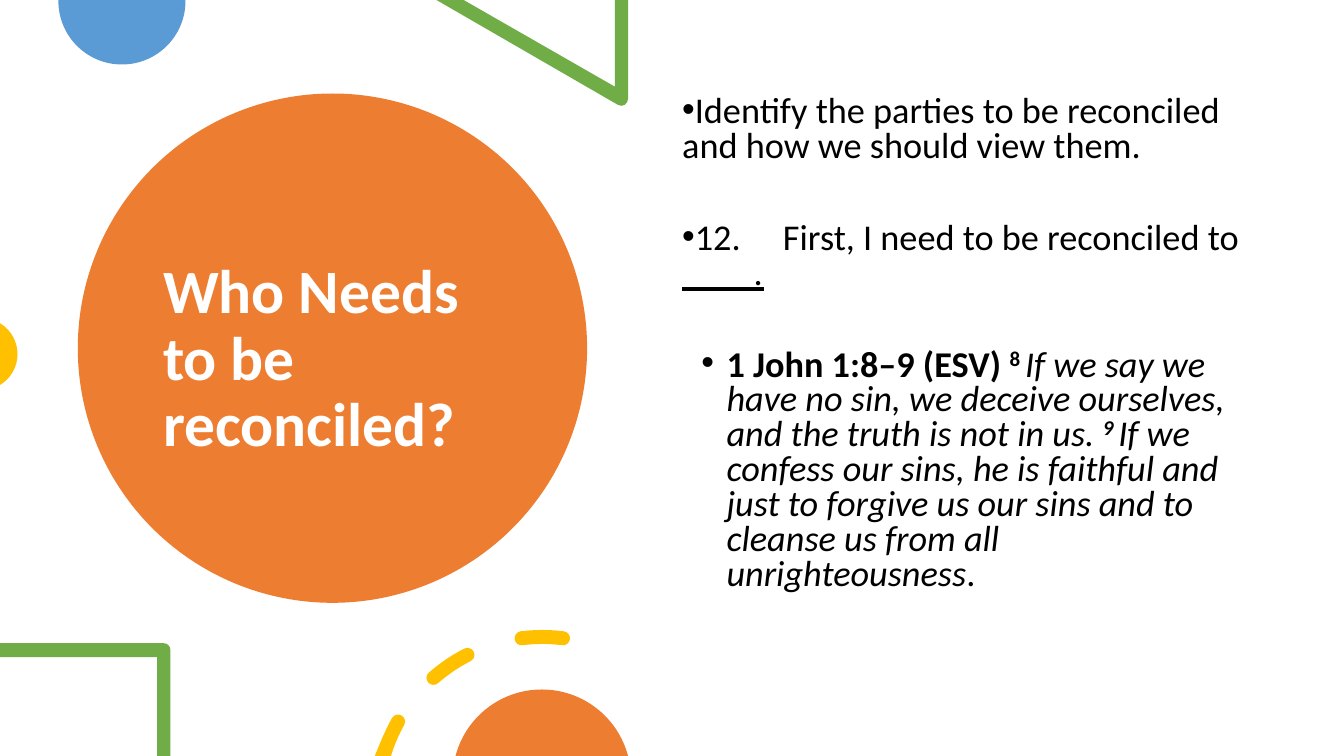
import math

import pptx
import pptx.dml.color
import pptx.enum.shapes
import pptx.enum.text
import pptx.oxml
import pptx.oxml.ns
import pptx.util

Pt = pptx.util.Pt
qn = pptx.oxml.ns.qn
ORANGE, BLUE, GREEN, YELLOW = "ED7D31", "5B9BD5", "70AD47", "FFC000"
BLACK, WHITE = "000000", "FFFFFF"
BODY_SIZE = 25.9
SLIDE_W, SLIDE_H = 960, 540
DRAWING_NS = "http://schemas.openxmlformats.org/drawingml/2006/main"


def rgb(color):
    return pptx.dml.color.RGBColor.from_string(color)


def paint(sp, color):
    sp.shadow.inherit = False
    sp.fill.solid()
    sp.fill.fore_color.rgb = rgb(color)
    sp.line.fill.background()


def add_circle(s, x, y, size, color):
    kind = pptx.enum.shapes.MSO_SHAPE.OVAL
    paint(s.shapes.add_shape(kind, Pt(x), Pt(y), Pt(size), Pt(size)), color)


def on_circle(cx, cy, radius, degrees):
    a = math.radians(degrees)
    return cx + radius * math.cos(a), cy + radius * math.sin(a)


def arc(cx, cy, radius, start, end):
    """Curves along an arc; degrees run clockwise from the right."""
    count = math.ceil(abs(end - start) / 90)
    step = (end - start) / count
    reach = 4 / 3 * math.tan(math.radians(step / 4)) * radius
    curves = []
    for i in range(count):
        a, b = start + i * step, start + (i + 1) * step
        (x1, y1), (x2, y2) = on_circle(cx, cy, radius, a), on_circle(cx, cy, radius, b)
        (dx1, dy1), (dx2, dy2) = on_circle(0, 0, reach, a + 90), on_circle(0, 0, reach, b + 90)
        curves.append(((x1 + dx1, y1 + dy1), (x2 - dx2, y2 - dy2), (x2, y2)))
    return curves


def add_outline(s, color, *contours):
    """Each contour is a start point, then points (lines) or point triples (curves)."""
    builder, curve_starts, line_count = None, [], 0
    for start, *segments in contours:
        corner = Pt(start[0]), Pt(start[1])
        if builder is None:
            builder = s.shapes.build_freeform(*corner, scale=1.0)
        else:
            builder.move_to(*corner)
        points = []
        for segment in segments:
            is_curve = len(segment) == 3
            if is_curve:
                curve_starts.append(line_count + len(points))
            points.extend(segment if is_curve else [segment])
        builder.add_line_segments([(Pt(x), Pt(y)) for x, y in points], close=True)
        line_count += len(points)
    sp = builder.convert_to_shape()

    # Turn each triple of lines into one curve
    lines = list(sp._element.iter(qn("a:lnTo")))
    for i in curve_starts:
        curve = pptx.oxml.parse_xml(f'<a:cubicBezTo xmlns:a="{DRAWING_NS}"/>')
        lines[i].addprevious(curve)
        for line in lines[i:i + 3]:
            curve.append(line[0])
            line.getparent().remove(line)
    paint(sp, color)


def round_dash(cx, cy, radius, half, start, end):
    """Arc-shaped dash with round ends."""
    tip, tail = on_circle(cx, cy, radius, end), on_circle(cx, cy, radius, start)
    return [on_circle(cx, cy, radius + half, start),
            *arc(cx, cy, radius + half, start, end),
            *arc(*tip, half, end, end + 180),
            *arc(cx, cy, radius - half, end, start),
            *arc(*tail, half, start + 180, start + 360)]


def add_textbox(s, x, y, w, h, anchor):
    tf = s.shapes.add_textbox(Pt(x), Pt(y), Pt(w), Pt(h)).text_frame
    tf.word_wrap = True
    tf.vertical_anchor = anchor
    return tf


def add_run(p, text, size=BODY_SIZE, color=BLACK, bold=False, italic=False,
            underline=False, raised=False):
    r = p.add_run()
    r.text = text
    r.font.name = "Calibri"
    r.font.size = Pt(size)
    r.font.color.rgb = rgb(color)
    r.font.bold = bold
    r.font.italic = italic
    r.font.underline = underline
    if raised:
        r.font._element.set("baseline", "30000")


def format_bullet(p, left, after):
    p.line_spacing = 0.8
    p.space_after = Pt(after)
    props = p._p.get_or_add_pPr()
    props.set("marL", str(Pt(left)))
    props.set("indent", str(Pt(-18)))
    for tag in ('buFont typeface="Arial"', 'buChar char="•"'):
        props.append(pptx.oxml.parse_xml(f'<a:{tag} xmlns:a="{DRAWING_NS}"/>'))


def add_top_and_left_decorations(s):
    # Half disc, triangle corner, disc segment
    add_outline(s, BLUE, [(132.5, 0), (41.7, 0), (41.7, 0.7), *arc(87.1, 0.7, 45.4, 180, 0)])
    add_outline(s, GREEN, [(448.6, 0), (439.2, 0), (439.2, 61.9), (331.2, 0), (311.8, 0),
                           (441.4, 74.9), *arc(443.7, 70.7, 4.9, 118, 0)])
    add_outline(s, YELLOW, [(0, 231.1), (0, 275), *arc(-13.3, 253, 25.8, 58.2, -58.2)])


def add_bottom_decorations(s):
    # Square corner
    add_outline(s, GREEN, [(117, 459.4), (0, 459.4), (0, 469.4), (112.3, 469.4),
                           (112.3, SLIDE_H), (121.7, SLIDE_H), (121.7, 464.2),
                           *arc(116.9, 464.2, 4.8, 0, -90)])

    # Dashed ring, its lowest dash cut by the slide edge
    ring = cx, cy, radius, half = 387.4, 573, 118, 5
    cut_dash = [(267.8, SLIDE_H), *arc(cx, cy, radius + half, 195.6, 209.2),
                *arc(*on_circle(cx, cy, radius, 209.2), half, 209.2, 389.2),
                *arc(cx, cy, radius - half, 209.2, 197)]
    add_outline(s, YELLOW, cut_dash, round_dash(*ring, 228.8, 243.1),
                round_dash(*ring, 262.8, 277.2))

    # Disc inside the ring
    add_outline(s, ORANGE, [(325.4, SLIDE_H), *arc(387, 556.2, 63.7, 194.7, 345.3)])


def add_verses(s):
    # Left margin, space after, runs
    bullets = [
        (0, 40.8, [("Identify the parties to be reconciled and how we should view them.", {})]),
        (0, 40.8, [("12. \tFirst, I need to be reconciled to ", {}),
                   ("____.", dict(italic=True, underline=True))]),
        (31.7, 8, [
            ("1 John 1:8–9 (ESV) ", dict(bold=True)),
            ("8 ", dict(bold=True, raised=True)),
            ("If we say we have no sin, we deceive ourselves, and the truth is not in us. ",
             dict(italic=True)),
            ("9 ", dict(bold=True, italic=True, raised=True)),
            ("If we confess our sins, he is faithful and just to forgive us our sins "
             "and to cleanse us from all unrighteousness", dict(italic=True)),
            (".", {}),
        ]),
    ]
    tf = add_textbox(s, 480.2, 64.8, 414, 385.2, pptx.enum.text.MSO_ANCHOR.TOP)
    for i, (left, after, runs) in enumerate(bullets):
        p = tf.add_paragraph() if i else tf.paragraphs[0]
        format_bullet(p, left, after)
        for text, fmt in runs:
            add_run(p, text, **fmt)


def main():
    prs = pptx.Presentation()
    prs.slide_width, prs.slide_height = Pt(SLIDE_W), Pt(SLIDE_H)
    s = prs.slides.add_slide(prs.slide_layouts[6])

    # Title on the large disc
    add_circle(s, 55.6, 66.8, 363.8, ORANGE)
    tf = add_textbox(s, 109.4, 97.2, 254.9, 320.4, pptx.enum.text.MSO_ANCHOR.MIDDLE)
    p = tf.paragraphs[0]
    p.line_spacing = 0.9
    add_run(p, "Who Needs to be reconciled?", size=44, color=WHITE, bold=True)

    add_top_and_left_decorations(s)
    add_verses(s)
    add_bottom_decorations(s)
    prs.save("out.pptx")


if __name__ == "__main__":
    main()
